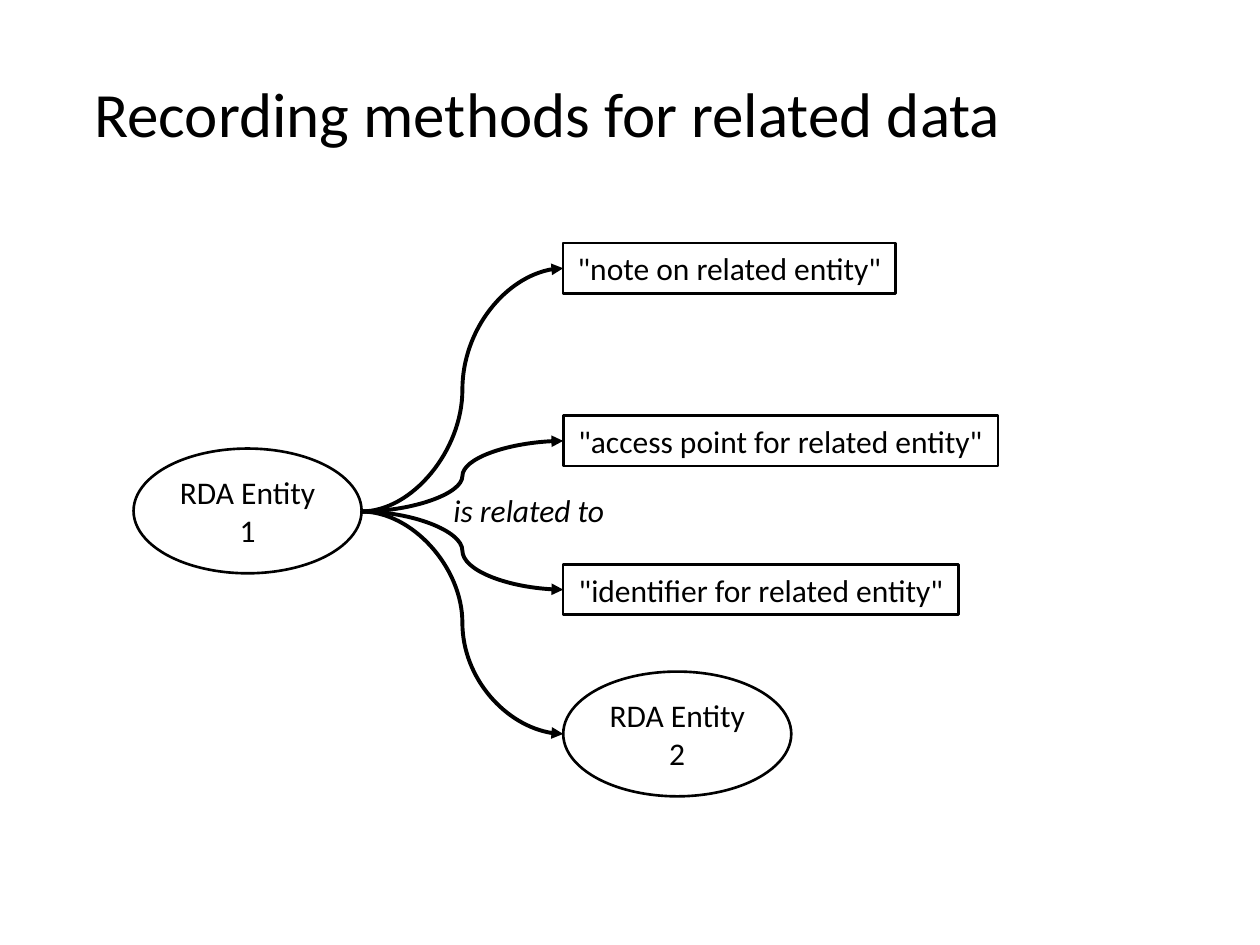
import pptx
import pptx.util
import pptx.dml.color
import pptx.enum.shapes
import pptx.enum.text
from lxml import etree
from pptx.oxml.ns import qn
from pptx.util import Inches

COLORS = {"ink": "000000", "paper": "FFFFFF"}
INK = pptx.dml.color.RGBColor.from_string(COLORS["ink"])
PAPER = pptx.dml.color.RGBColor.from_string(COLORS["paper"])
KINDS = pptx.enum.shapes.MSO_SHAPE
ALIGN = pptx.enum.text.PP_ALIGN


def write(shape, text, size=18, align=ALIGN.CENTER, italic=None):
    frame = shape.text_frame
    frame.text = text
    frame.word_wrap = False
    frame.auto_size = pptx.enum.text.MSO_AUTO_SIZE.NONE
    frame.vertical_anchor = pptx.enum.text.MSO_ANCHOR.MIDDLE
    for para in frame.paragraphs:
        para.alignment = align
        for run in para.runs:
            run.font.name = "Calibri"
            run.font.size = pptx.util.Pt(size)
            run.font.italic = italic
            run.font.color.rgb = INK


def add_node(kind, left, top, width, height, text):
    node = slide.shapes.add_shape(
        kind, Inches(left), Inches(top), Inches(width), Inches(height))
    node.shadow.inherit = False
    node.fill.background()
    node.line.color.rgb = INK
    node.line.width = pptx.util.Pt(1.5)
    write(node, text)


deck = pptx.Presentation()
deck.slide_width = Inches(10)
deck.slide_height = Inches(7.5)
slide = deck.slides.add_slide(deck.slide_layouts[5])
slide.background.fill.solid()
slide.background.fill.fore_color.rgb = PAPER

title = slide.shapes.title
title.left, title.top = Inches(0.65), Inches(0.54)
title.width, title.height = Inches(7.46), Inches(0.71)
write(title, "Recording methods for related data", 36, ALIGN.LEFT)

# Source entity on the left, its four targets in one column
oval_w, oval_h = 1.81, 0.99
start_x, start_y = 2.87, 4.06
column = 4.47
add_node(KINDS.OVAL, start_x - oval_w, 3.56, oval_w, oval_h, "RDA Entity\n1")

targets = [
    (KINDS.RECTANGLE, 1.93, 2.64, 0.4, '"note on related entity"'),
    (KINDS.RECTANGLE, 3.3, 3.45, 0.4, '"access point for related entity"'),
    (KINDS.RECTANGLE, 4.48, 3.14, 0.4, '"identifier for related entity"'),
    (KINDS.OVAL, 5.33, oval_w, oval_h, "RDA Entity\n2"),
]
for kind, top, width, height, text in targets:
    add_node(kind, column, top, width, height, text)
    arrow = slide.shapes.add_connector(
        pptx.enum.shapes.MSO_CONNECTOR.CURVE,
        Inches(start_x), Inches(start_y),
        Inches(column), Inches(top + height / 2))
    arrow.line.color.rgb = INK
    arrow.line.width = pptx.util.Pt(2.25)
    etree.SubElement(arrow.line._get_or_add_ln(), qn("a:tailEnd"), type="triangle")
    etree.SubElement(arrow._element.spPr, qn("a:effectLst"))

label = slide.shapes.add_textbox(
    Inches(3.5), Inches(3.85), Inches(1.41), Inches(0.4))
write(label, "is related to", align=ALIGN.LEFT, italic=True)

deck.save("out.pptx")
